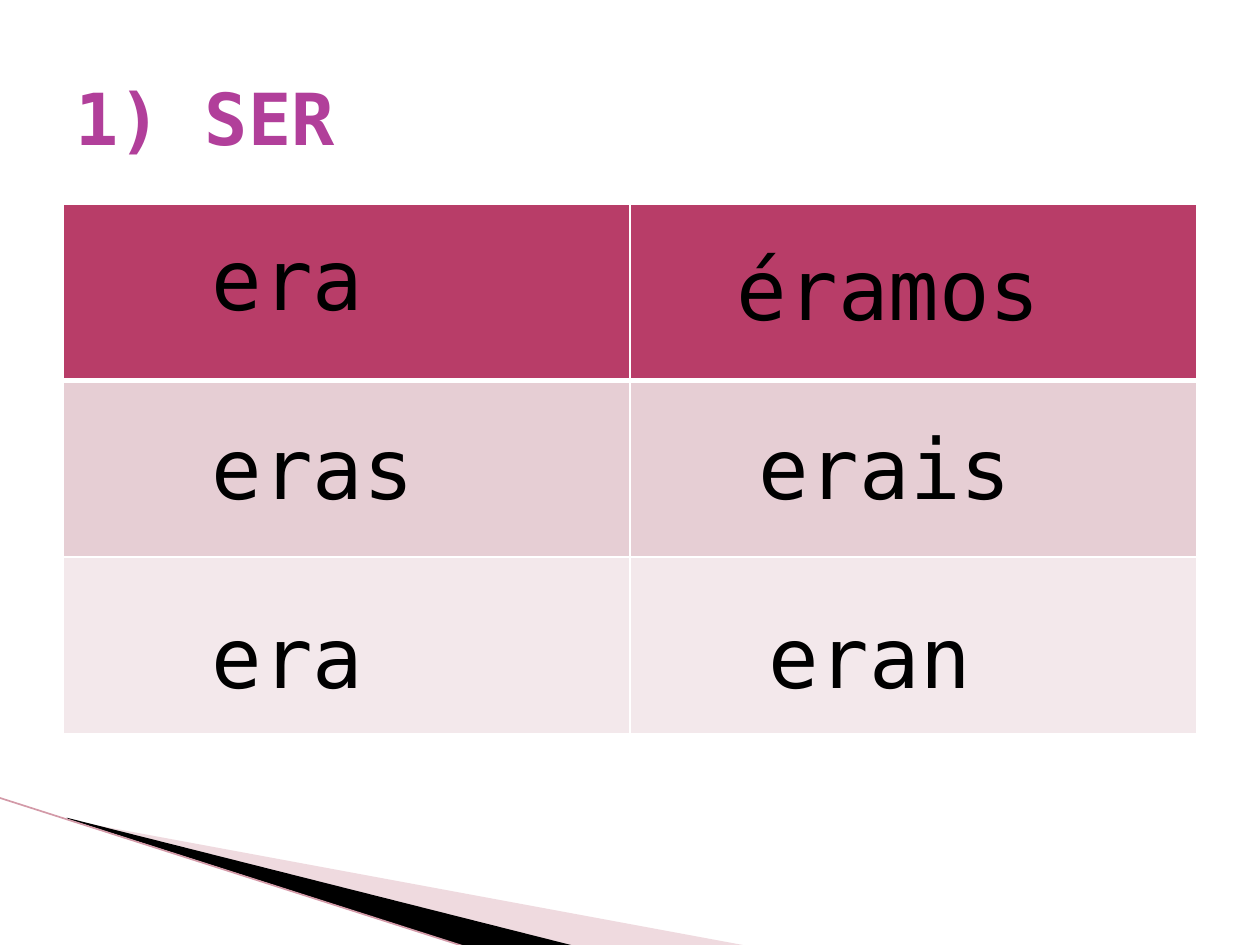
from lxml import etree
from pptx import Presentation
from pptx.dml.color import RGBColor
from pptx.enum.shapes import MSO_CONNECTOR
from pptx.enum.text import MSO_ANCHOR, MSO_AUTO_SIZE
from pptx.oxml.ns import qn
from pptx.util import Pt

STRAIGHT = MSO_CONNECTOR.STRAIGHT
MIDDLE = MSO_ANCHOR.MIDDLE
TOP = MSO_ANCHOR.TOP
GROW = MSO_AUTO_SIZE.SHAPE_TO_FIT_TEXT
FIXED = MSO_AUTO_SIZE.NONE
EMU_PER_PX = 9144
FONT = "DejaVu Sans Mono"
COLORS = {
    "white": "FFFFFF",
    "black": "000000",
    "title": "B13F9A",
    "wedge": "D8A3AF",
    "edge": "D39AA8",
    "header": "B83D68",
    "band_dark": "E6CED4",
    "band_light": "F3E8EB",
}
ROW_FILLS = ["header", "band_dark", "band_light"]
FORMS = [
    ("era", 158, 175, 242),
    ("eras", 158, 325, 242),
    ("era", 158, 475, 242),
    ("éramos", 575, 183, 308),
    ("erais", 592, 325, 242),
    ("eran", 600, 475, 242),
]


def px(value):
    return value * EMU_PER_PX


def rgb(name):
    return RGBColor.from_string(COLORS[name])


def add_wedge(slide, points, color, opacity=100):
    builder = slide.shapes.build_freeform(*points[0], scale=EMU_PER_PX)
    builder.add_line_segments(points[1:], close=True)
    shape = builder.convert_to_shape()
    shape.shadow.inherit = False
    shape.fill.solid()
    shape.fill.fore_color.rgb = rgb(color)
    shape.line.fill.background()
    if opacity < 100:
        color_element = shape.fill._xPr.find(qn("a:solidFill"))[0]
        etree.SubElement(color_element, qn("a:alpha"), val=str(opacity * 1000))


def add_line(slide, start, end, color, width):
    line = slide.shapes.add_connector(STRAIGHT, *map(px, start + end))
    line.line.color.rgb = rgb(color)
    line.line.width = Pt(width)
    etree.SubElement(line._element.spPr, qn("a:effectLst"))


def add_border(cell, side, width):
    properties = cell._tc.get_or_add_tcPr()
    border = etree.SubElement(properties, qn(f"a:ln{side}"), w=str(Pt(width)))
    fill = etree.SubElement(border, qn("a:solidFill"))
    etree.SubElement(fill, qn("a:srgbClr"), val=COLORS["white"])


def add_grid(slide, left, top, column_width, row_height, columns=2):
    rows = len(ROW_FILLS)
    frame = slide.shapes.add_table(
        rows, columns, px(left), px(top),
        px(column_width * columns), px(row_height * rows))
    for row, color in enumerate(ROW_FILLS):
        for column in range(columns):
            cell = frame.table.cell(row, column)
            add_border(cell, "L", 1)
            add_border(cell, "R", 1)
            add_border(cell, "T", 3 if row == 1 else 1)
            add_border(cell, "B", 3 if row == 0 else 1)
            cell.fill.solid()
            cell.fill.fore_color.rgb = rgb(color)


def add_text(slide, text, box, size, color, bold=False, anchor=TOP, fit=GROW):
    frame = slide.shapes.add_textbox(*map(px, box)).text_frame
    frame.word_wrap = True
    frame.auto_size = fit
    frame.vertical_anchor = anchor
    run = frame.paragraphs[0].add_run()
    run.text = text
    run.font.name = FONT
    run.font.size = Pt(size)
    run.font.bold = bold
    run.font.color.rgb = rgb(color)


def main():
    presentation = Presentation()
    presentation.slide_width = px(1000)
    presentation.slide_height = px(750)
    slide = presentation.slides.add_slide(presentation.slide_layouts[6])

    add_wedge(slide, [(55, 651), (595, 751), (456, 751), (55, 650)], "wedge", 40)
    add_wedge(slide, [(53, 649), (457, 751), (372, 752), (54, 650)], "black")
    add_line(slide, (-1, 633), (371, 752), "edge", 0.95)
    add_grid(slide, 50, 162, 450, 140)
    add_text(slide, "1) SER", (50, 30, 900, 125), 41, "title", True, MIDDLE, FIXED)
    for text, left, top, width in FORMS:
        add_text(slide, text, (left, top, width, 91), 48, "black")

    presentation.save("out.pptx")


if __name__ == "__main__":
    main()
